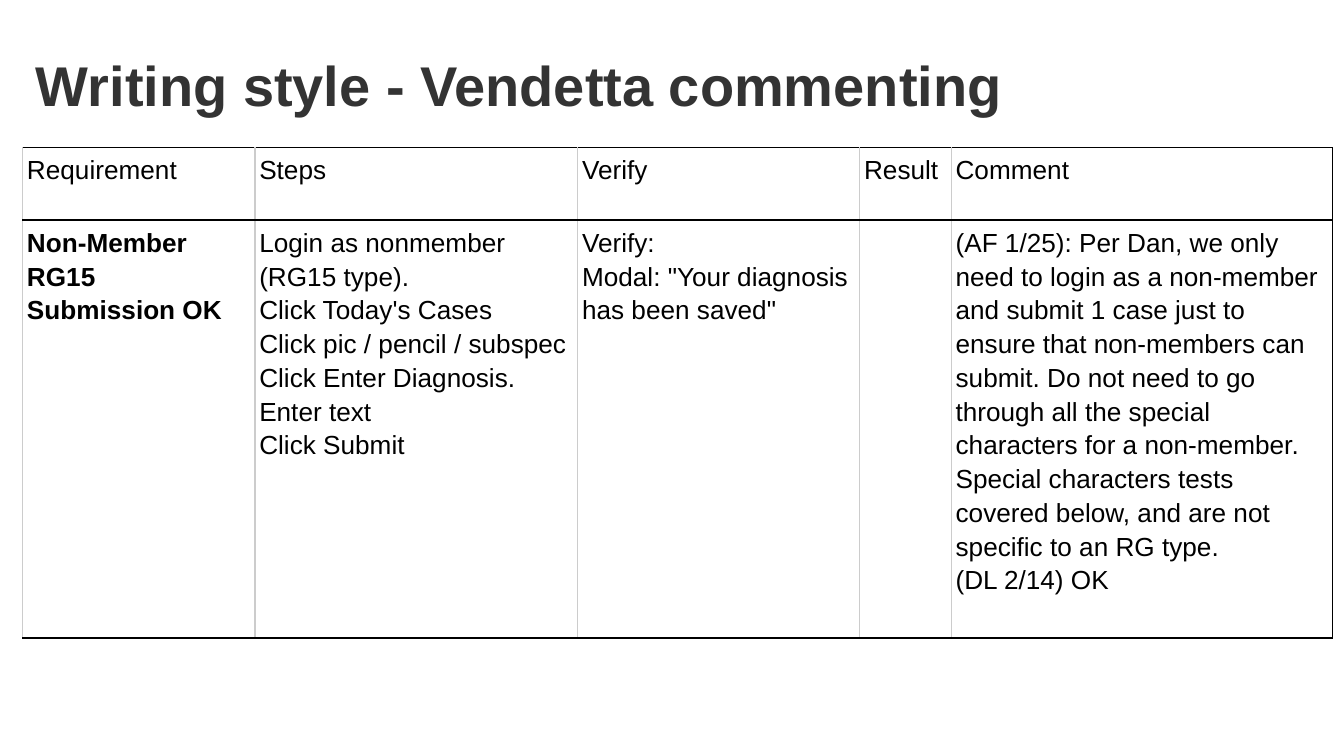
from lxml.etree import SubElement
from pptx import Presentation
from pptx.dml.color import RGBColor
from pptx.enum.text import MSO_ANCHOR as Anchor, MSO_AUTO_SIZE as AutoSize, PP_ALIGN as Align
from pptx.oxml.ns import qn
from pptx.util import Cm, Pt

BLACK, GRAY, WHITE, TITLE_COLOR = "000000", "CCCCCC", "FFFFFF", "333333"
TITLE_BOX = (0.43, 0.38, 24.51, 1.6)
TABLE_BOX = (0.43, 2.79, 24.75, 9.27)
COLUMN_WIDTHS = (4.39, 6.1, 5.33, 1.73, 7.2)
ROW_HEIGHTS = (1.37, 7.9)
ROWS = (
    (["Requirement"], ["Steps"], ["Verify"], ["Result"], ["Comment"]),
    (
        ["Non-Member RG15 Submission OK"],
        ["Login as nonmember (RG15 type).", "Click Today's Cases", "Click pic / pencil / subspec",
         "Click Enter Diagnosis.", "Enter text", "Click Submit"],
        ["Verify:", 'Modal: "Your diagnosis has been saved"'],
        [],
        ["(AF 1/25): Per Dan, we only need to login as a non-member and submit 1 case just to "
         "ensure that non-members can submit. Do not need to go through all the special "
         "characters for a non-member. Special characters tests covered below, and are not "
         "specific to an RG type.",
         "(DL 2/14) OK"],
    ),
)


def color(value):
    return RGBColor.from_string(value)


def write_text(frame, lines, size=14, fill=BLACK, bold=False, space_after=0):
    for index, line in enumerate(lines):
        paragraph = frame.paragraphs[0] if index == 0 else frame.add_paragraph()
        paragraph.alignment = Align.LEFT
        paragraph.line_spacing = 1.15
        paragraph.space_before = Pt(0)
        paragraph.space_after = Pt(space_after)
        run = paragraph.add_run()
        run.text = line
        run.font.name = "Arial"
        run.font.size = Pt(size)
        run.font.bold = bold
        run.font.color.rgb = color(fill)


def set_borders(cell, **sides):
    """Draw cell borders; sides are given in the schema order L, R, T, B."""
    properties = cell._tc.get_or_add_tcPr()
    for index, (side, value) in enumerate(sides.items()):
        line = properties.makeelement(qn(f"a:ln{side}"), {"w": str(Pt(0.75))})
        fill = SubElement(line, qn("a:solidFill"))
        SubElement(fill, qn("a:srgbClr"), val=value)
        properties.insert(index, line)


def place_title(slide, box, text):
    title = slide.shapes.title
    title.left, title.top, title.width, title.height = map(Cm, box)
    frame = title.text_frame
    frame.word_wrap = True
    frame.auto_size = AutoSize.NONE
    frame.vertical_anchor = Anchor.TOP
    frame.margin_left = frame.margin_right = frame.margin_bottom = Cm(0.25)
    frame.margin_top = Cm(0.38)
    write_text(frame, [text], size=30, fill=TITLE_COLOR, bold=True, space_after=11)


def place_test_table(slide, box, rows):
    table = slide.shapes.add_table(len(rows), len(COLUMN_WIDTHS), *map(Cm, box)).table
    table.first_row = table.horz_banding = False
    for column, width in zip(table.columns, COLUMN_WIDTHS):
        column.width = Cm(width)
    last = len(COLUMN_WIDTHS) - 1
    for row_index, (row, height) in enumerate(zip(rows, ROW_HEIGHTS)):
        table.rows[row_index].height = Cm(height)
        for column_index, lines in enumerate(row):
            cell = table.cell(row_index, column_index)
            cell.margin_left = cell.margin_right = Cm(0.08)
            cell.margin_top = cell.margin_bottom = Cm(0.08)
            cell.vertical_anchor = Anchor.TOP
            cell.fill.solid()
            cell.fill.fore_color.rgb = color(WHITE)
            right = BLACK if column_index == last else GRAY
            set_borders(cell, L=GRAY, R=right, T=BLACK, B=BLACK)
            write_text(cell.text_frame, lines, bold=row_index > 0 and column_index == 0)


def main():
    presentation = Presentation()
    presentation.slide_width, presentation.slide_height = Cm(25.4), Cm(14.29)
    slide = presentation.slides.add_slide(presentation.slide_layouts[5])
    place_title(slide, TITLE_BOX, "Writing style - Vendetta commenting")
    place_test_table(slide, TABLE_BOX, ROWS)
    presentation.save("out.pptx")


if __name__ == "__main__":
    main()
